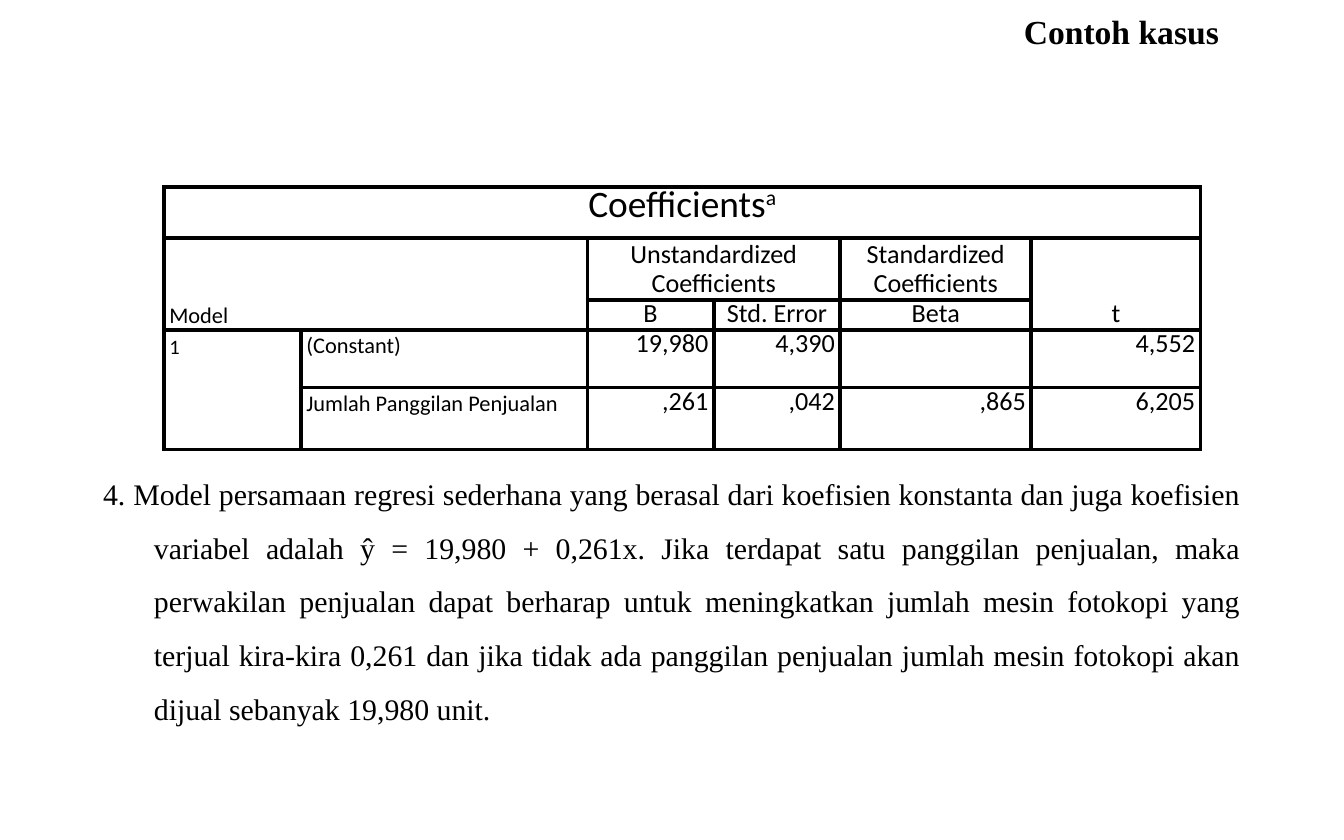
from lxml import etree
from pptx import Presentation, util as u
from pptx.dml import color
from pptx.enum import text
from pptx.oxml import ns

COLORS = {"ink": "000000", "paper": "FFFFFF"}
LEFT, CENTER, RIGHT = text.PP_ALIGN.LEFT, text.PP_ALIGN.CENTER, text.PP_ALIGN.RIGHT
TOP, MIDDLE, BOTTOM = text.MSO_ANCHOR.TOP, text.MSO_ANCHOR.MIDDLE, text.MSO_ANCHOR.BOTTOM


def add_run(paragraph, content, size, font_name, bold=False):
    run = paragraph.add_run()
    run.text = content
    run.font.size = u.Pt(size)
    run.font.name = font_name
    run.font.bold = bold
    run.font.color.rgb = color.RGBColor.from_string(COLORS["ink"])
    return run


def add_text_box(left, top, width, height):
    shape = slide.shapes.add_textbox(u.Cm(left), u.Cm(top), u.Cm(width), u.Cm(height))
    shape.text_frame.word_wrap = True
    shape.text_frame.auto_size = text.MSO_AUTO_SIZE.SHAPE_TO_FIT_TEXT
    paragraph = shape.text_frame.paragraphs[0]
    paragraph.alignment = text.PP_ALIGN.JUSTIFY
    return paragraph


presentation = Presentation()
presentation.slide_width = u.Cm(25.4)
presentation.slide_height = u.Cm(15.88)
slide = presentation.slides.add_slide(presentation.slide_layouts[6])
slide.background.fill.solid()
slide.background.fill.fore_color.rgb = color.RGBColor.from_string(COLORS["paper"])

title = add_text_box(19.1, 0.08, 12.7, 1.02)
add_run(title, "Contoh kasus", 18, "Times New Roman", True)

column_widths = [2.59, 5.41, 2.39, 2.39, 3.61, 3.2]
row_heights = [0.97, 1.17, 0.56, 1.09, 1.17]
table = slide.shapes.add_table(
    len(row_heights), len(column_widths), u.Cm(3.1), u.Cm(3.53),
    u.Cm(sum(column_widths)), u.Cm(sum(row_heights))).table
table.first_row = False
table.horz_banding = False
for column, width in zip(table.columns, column_widths):
    column.width = u.Cm(width)
for row, height in zip(table.rows, row_heights):
    row.height = u.Cm(height)

for cell in table.iter_cells():
    cell.margin_left = cell.margin_right = cell.margin_top = cell.margin_bottom = 0
    properties = cell._tc.get_or_add_tcPr()
    for side in ("a:lnL", "a:lnR", "a:lnT", "a:lnB"):
        line = etree.SubElement(properties, ns.qn(side), w=str(u.Pt(2.25)))
        line_fill = etree.SubElement(line, ns.qn("a:solidFill"))
        etree.SubElement(line_fill, ns.qn("a:srgbClr"), val=COLORS["ink"])
    cell.fill.background()

for first, last in [((0, 0), (0, 5)), ((1, 0), (2, 1)), ((1, 2), (1, 3)),
                    ((1, 5), (2, 5)), ((3, 0), (4, 0))]:
    table.cell(*first).merge(table.cell(*last))

entries = [
    (0, 0, "Coefficients", 20, CENTER, MIDDLE),
    (1, 0, "Model", 12, LEFT, BOTTOM),
    (1, 2, "Unstandardized Coefficients", 14, CENTER, BOTTOM),
    (1, 4, "Standardized Coefficients", 14, CENTER, BOTTOM),
    (1, 5, "t", 14, CENTER, BOTTOM),
    (2, 2, "B", 14, CENTER, BOTTOM),
    (2, 3, "Std. Error", 14, CENTER, BOTTOM),
    (2, 4, "Beta", 14, CENTER, BOTTOM),
    (3, 0, "1", 11, LEFT, TOP),
    (3, 1, "(Constant)", 12, LEFT, TOP),
    (3, 2, "19,980", 14, RIGHT, TOP),
    (3, 3, "4,390", 14, RIGHT, TOP),
    (3, 5, "4,552", 14, RIGHT, TOP),
    (4, 1, "Jumlah Panggilan Penjualan", 12, LEFT, TOP),
    (4, 2, ",261", 14, RIGHT, TOP),
    (4, 3, ",042", 14, RIGHT, TOP),
    (4, 4, ",865", 14, RIGHT, TOP),
    (4, 5, "6,205", 14, RIGHT, TOP),
]
for row_index, column_index, content, size, alignment, anchor in entries:
    cell = table.cell(row_index, column_index)
    cell.vertical_anchor = anchor
    paragraph = cell.text_frame.paragraphs[0]
    paragraph.alignment = alignment
    paragraph.line_spacing = u.Pt(16)
    paragraph.space_after = u.Pt(8)
    for side in ("marL", "marR"):
        paragraph._p.get_or_add_pPr().set(side, str(u.Cm(0.1)))
    add_run(paragraph, content, size, "Calibri")

footnote_mark = add_run(table.cell(0, 0).text_frame.paragraphs[0], "a", 20, "Calibri")
footnote_mark._r.get_or_add_rPr().set("baseline", "30000")

explanation = add_text_box(1.7, 8.53, 22, 5.28)
explanation.line_spacing = 1.5
explanation.space_after = u.Pt(8)
indents = explanation._p.get_or_add_pPr()
indents.set("marL", str(u.Cm(0.96)))
indents.set("indent", str(-u.Cm(0.96)))
add_run(
    explanation,
    "4. Model persamaan regresi sederhana yang berasal dari koefisien konstanta dan juga "
    "koefisien variabel adalah ŷ = 19,980 + 0,261x. Jika terdapat satu panggilan penjualan, "
    "maka perwakilan penjualan dapat berharap untuk meningkatkan jumlah mesin fotokopi yang "
    "terjual kira-kira 0,261 dan jika tidak ada panggilan penjualan jumlah mesin fotokopi "
    "akan dijual sebanyak 19,980 unit.",
    16, "Times New Roman")

presentation.save("out.pptx")
